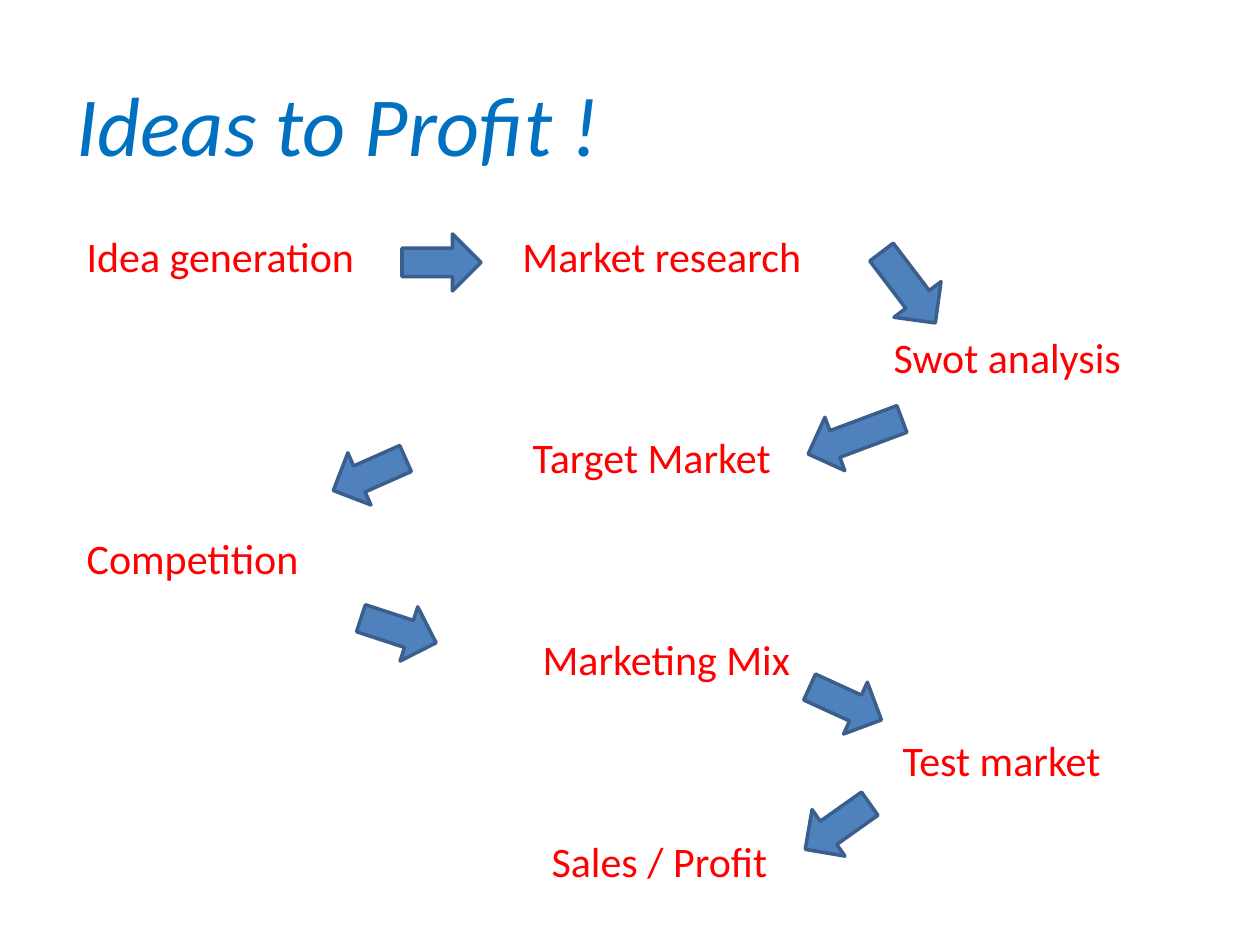
import lxml.etree
import pptx
import pptx.dml.color
import pptx.enum.shapes
import pptx.enum.text
import pptx.oxml.ns
import pptx.util

EMU_PER_PX = 914400 / 126
FONT = "Calibri"
TITLE_BLUE = pptx.dml.color.RGBColor(0x00, 0x70, 0xC0)
STEP_RED = pptx.dml.color.RGBColor(0xFF, 0x00, 0x00)
ARROW_FILL = pptx.dml.color.RGBColor(0x4F, 0x81, 0xBD)
ARROW_LINE = pptx.dml.color.RGBColor(0x3A, 0x5F, 0x8C)
RIGHT = pptx.enum.shapes.MSO_SHAPE.RIGHT_ARROW
DOWN = pptx.enum.shapes.MSO_SHAPE.DOWN_ARROW


def px(length):
    return pptx.util.Emu(round(length * EMU_PER_PX))


class FlowSlide:
    def __init__(self, deck):
        self.slide = deck.slides.add_slide(deck.slide_layouts[1])

    def place(self, holder, left, top, width, height):
        holder.left, holder.top = px(left), px(top)
        holder.width, holder.height = px(width), px(height)
        frame = holder.text_frame
        frame.auto_size = pptx.enum.text.MSO_AUTO_SIZE.NONE
        frame.word_wrap = False
        frame.vertical_anchor = pptx.enum.text.MSO_ANCHOR.TOP
        return frame

    def run(self, paragraph, text, size, color, italic=False):
        paragraph.alignment = pptx.enum.text.PP_ALIGN.LEFT
        run = paragraph.add_run()
        run.text = text
        run.font.name = FONT
        run.font.size = pptx.util.Pt(size)
        run.font.italic = italic
        run.font.color.rgb = color

    def title(self, text, *box):
        frame = self.place(self.slide.shapes.title, *box)
        self.run(frame.paragraphs[0], text, 48, TITLE_BLUE, italic=True)

    def steps(self, rows, *box):
        frame = self.place(self.slide.placeholders[1], *box)
        for number, (indent, text) in enumerate(rows):
            row = frame.add_paragraph() if number else frame.paragraphs[0]
            row.line_spacing = 1.0
            row.space_before = pptx.util.Pt(28.8 if number else 0)
            self.run(row, text, 24, STEP_RED)
            # Plain paragraph with its own indent
            properties = row._p.get_or_add_pPr()
            properties.set("marL", str(px(indent)))
            properties.set("indent", "0")
            lxml.etree.SubElement(properties, pptx.oxml.ns.qn("a:buNone"))

    def side_step(self, text, *box):
        label = self.slide.shapes.add_textbox(0, 0, 0, 0)
        frame = self.place(label, *box)
        self.run(frame.paragraphs[0], text, 24, STEP_RED)

    def arrow(self, kind, left, top, width, height, rotation):
        arrow = self.slide.shapes.add_shape(
            kind, px(left), px(top), px(width), px(height))
        arrow.rotation = rotation
        arrow.shadow.inherit = False
        arrow.fill.solid()
        arrow.fill.fore_color.rgb = ARROW_FILL
        arrow.line.color.rgb = ARROW_LINE
        arrow.line.width = pptx.util.Pt(2)


def main():
    deck = pptx.Presentation()
    deck.slide_width, deck.slide_height = px(1260), px(945)
    flow = FlowSlide(deck)

    # Title
    flow.title("Ideas to Profit !", 64, 66, 556, 115)

    # Steps from idea to profit: indent, text
    flow.steps([
        (0, "Idea generation"),
        (807, "Swot analysis"),
        (446, "Target Market"),
        (0, "Competition"),
        (456, "Marketing Mix"),
        (816, "Test market"),
        (465, "Sales / Profit"),
    ], 74, 224, 1062, 674)

    # Second step, on the same line as the first
    flow.side_step("Market research", 510, 224, 306, 64)

    # Arrows between the steps, in order
    for kind, left, top, width, height, rotation in [
        (RIGHT, 402, 234, 79, 57, 0),
        (DOWN, 879, 243, 59, 89, 322.8),
        (RIGHT, 805, 408, 100, 57, 159.5),
        (RIGHT, 330, 446, 79, 57, 156.1),
        (RIGHT, 359, 602, 79, 57, 18.1),
        (RIGHT, 806, 675, 79, 57, 24.6),
        (RIGHT, 798, 798, 79, 57, 144.7),
    ]:
        flow.arrow(kind, left, top, width, height, rotation)

    deck.save("out.pptx")


if __name__ == "__main__":
    main()
